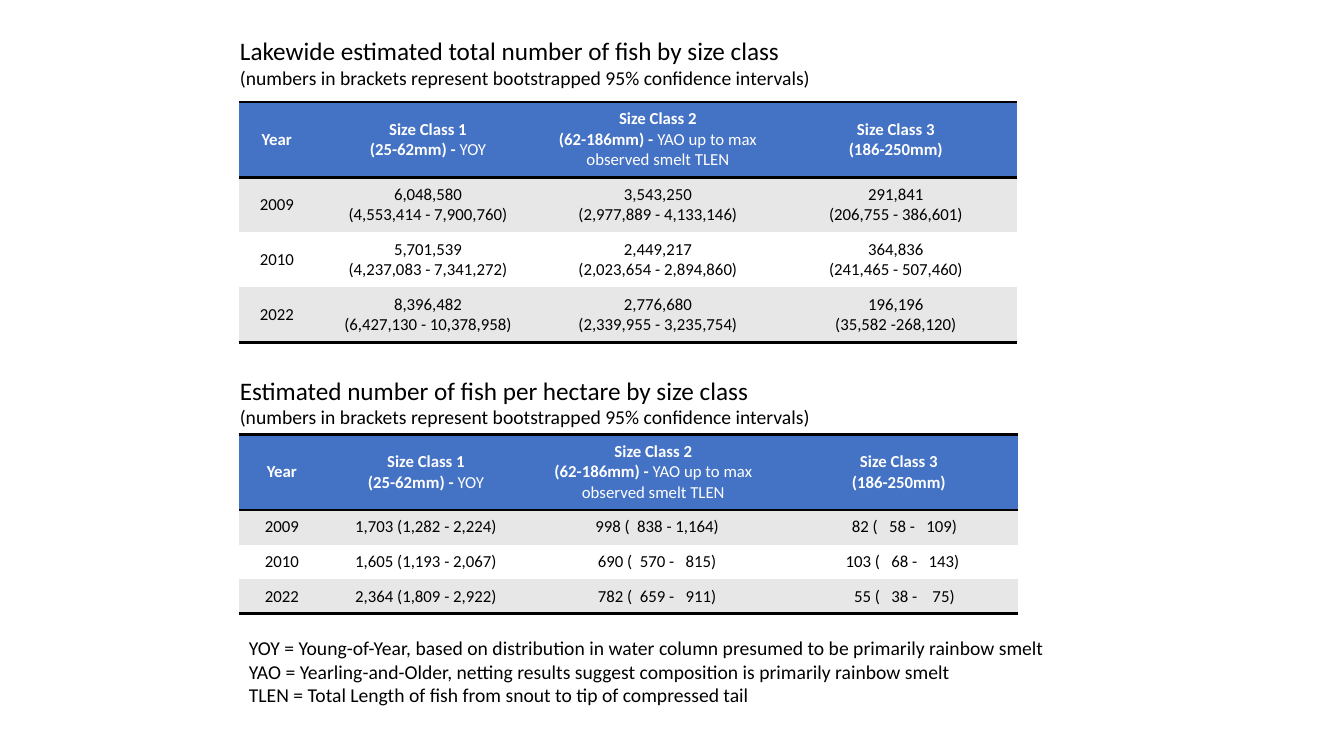
from lxml import etree
from pptx import Presentation
from pptx.dml.color import RGBColor
from pptx.enum import text
from pptx.oxml import ns
from pptx.util import Inches, Pt

BLACK = RGBColor(0x00, 0x00, 0x00)
WHITE = RGBColor(0xFF, 0xFF, 0xFF)
BLUE = RGBColor(0x44, 0x72, 0xC4)
GRAY = RGBColor(0xE7, 0xE7, 0xE7)
NO_STYLE = "{2D5ABB26-0587-4C30-8999-92F81FD0307C}"


def write_heading(shape, heading):
    frame = shape.text_frame
    frame.vertical_anchor = text.MSO_ANCHOR.TOP
    paragraph = frame.paragraphs[0]
    paragraph.alignment = text.PP_ALIGN.LEFT
    paragraph.font.name = "Calibri"
    paragraph.font.color.rgb = BLACK
    for line, size in ((heading, 18), (INTERVAL_NOTE, 14)):
        if paragraph.runs:
            paragraph.add_line_break()
        run = paragraph.add_run()
        run.text = line
        run.font.size = Pt(size)


def add_border(cell, side):
    properties = cell._tc.get_or_add_tcPr()
    line = etree.SubElement(properties, ns.qn("a:" + side), w=str(Pt(2)))
    fill = etree.SubElement(line, ns.qn("a:solidFill"))
    etree.SubElement(fill, ns.qn("a:srgbClr"), val=str(BLACK))


INTERVAL_NOTE = "(numbers in brackets represent bootstrapped 95% confidence intervals)"
HEADERS = [
    ("Year", ""),
    ("Size Class 1\v(25-62mm) - ", "YOY"),
    ("Size Class 2\v(62-186mm) - ", "YAO up to max observed smelt TLEN"),
    ("Size Class 3\v(186-250mm)", ""),
]
LAKEWIDE = [
    ("2009", "6,048,580\v(4,553,414 - 7,900,760)",
     "3,543,250\v(2,977,889 - 4,133,146)", "291,841\v(206,755 - 386,601)"),
    ("2010", "5,701,539\v(4,237,083 - 7,341,272)",
     "2,449,217\v(2,023,654 - 2,894,860)", "364,836\v(241,465 - 507,460)"),
    ("2022", "8,396,482\v(6,427,130 - 10,378,958)",
     "2,776,680\v(2,339,955 - 3,235,754)", "196,196\v(35,582 -268,120)"),
]
PER_HECTARE = [
    ("2009", "1,703 (1,282 - 2,224)", "  998 (  838 - 1,164)", "   82 (   58 -   109)"),
    ("2010", "1,605 (1,193 - 2,067)", "  690 (  570 -   815)", "  103 (   68 -   143)"),
    ("2022", "2,364 (1,809 - 2,922)", "  782 (  659 -   911)", "   55 (   38 -    75)"),
]
TABLES = [
    (1.01, 0.54, (0.75, 2.25, 2.31, 2.41), LAKEWIDE),
    (4.31, 0.34, (0.85, 2.01, 2.5, 2.37), PER_HECTARE),
]
GLOSSARY = [
    "YOY = Young-of-Year, based on distribution in water column presumed to be primarily rainbow smelt",
    "YAO = Yearling-and-Older, netting results suggest composition is primarily rainbow smelt",
    "TLEN = Total Length of fish from snout to tip of compressed tail",
]
HEADER_HEIGHT = 0.74

presentation = Presentation()
presentation.slide_width = Inches(13.33)
presentation.slide_height = Inches(7.5)
slide = presentation.slides.add_slide(presentation.slide_layouts[5])

title = slide.shapes.title
title.left, title.top = Inches(2.28), Inches(0.3)
title.width, title.height = Inches(8.27), Inches(0.64)
title.text_frame.auto_size = text.MSO_AUTO_SIZE.NONE
write_heading(title, "Lakewide estimated total number of fish by size class")

for top, row_height, widths, records in TABLES:
    height = HEADER_HEIGHT + row_height * len(records)
    frame = slide.shapes.add_table(
        len(records) + 1, len(widths),
        Inches(2.37), Inches(top), Inches(sum(widths)), Inches(height))
    table = frame.table
    table._tbl.tblPr.find(ns.qn("a:tableStyleId")).text = NO_STYLE
    for column, width in zip(table.columns, widths):
        column.width = Inches(width)
    rows = [HEADERS] + [[(value, "") for value in record] for record in records]
    for row_index, row in enumerate(rows):
        is_header = row_index == 0
        table.rows[row_index].height = Inches(HEADER_HEIGHT if is_header else row_height)
        for column_index, (main, remark) in enumerate(row):
            cell = table.cell(row_index, column_index)
            cell.margin_left = cell.margin_right = 0
            cell.margin_top = cell.margin_bottom = Inches(0.07)
            cell.vertical_anchor = text.MSO_ANCHOR.MIDDLE
            if is_header:
                add_border(cell, "lnT")
            if is_header or row_index == len(records):
                add_border(cell, "lnB")
            cell.fill.solid()
            cell.fill.fore_color.rgb = BLUE if is_header else GRAY if row_index % 2 else WHITE
            paragraph = cell.text_frame.paragraphs[0]
            paragraph.text = main
            paragraph.alignment = text.PP_ALIGN.CENTER
            for run in paragraph.runs:
                run.font.bold = is_header
            if remark:
                run = paragraph.add_run()
                run.text = remark
                run.font.bold = False
            paragraph.font.name = "Calibri"
            paragraph.font.size = Pt(12)
            paragraph.font.color.rgb = WHITE if is_header else BLACK

hectare_heading = slide.shapes.add_textbox(Inches(2.28), Inches(3.67), Inches(5.91), Inches(0.64))
hectare_heading.text_frame.word_wrap = False
write_heading(hectare_heading, "Estimated number of fish per hectare by size class")

glossary = slide.shapes.add_textbox(Inches(2.37), Inches(6.26), Inches(8.45), Inches(0.81))
glossary.text_frame.word_wrap = False
glossary.text_frame.text = "\n".join(GLOSSARY)
for paragraph in glossary.text_frame.paragraphs:
    paragraph.font.name = "Calibri"
    paragraph.font.size = Pt(14)
    paragraph.font.color.rgb = BLACK

presentation.save("out.pptx")
